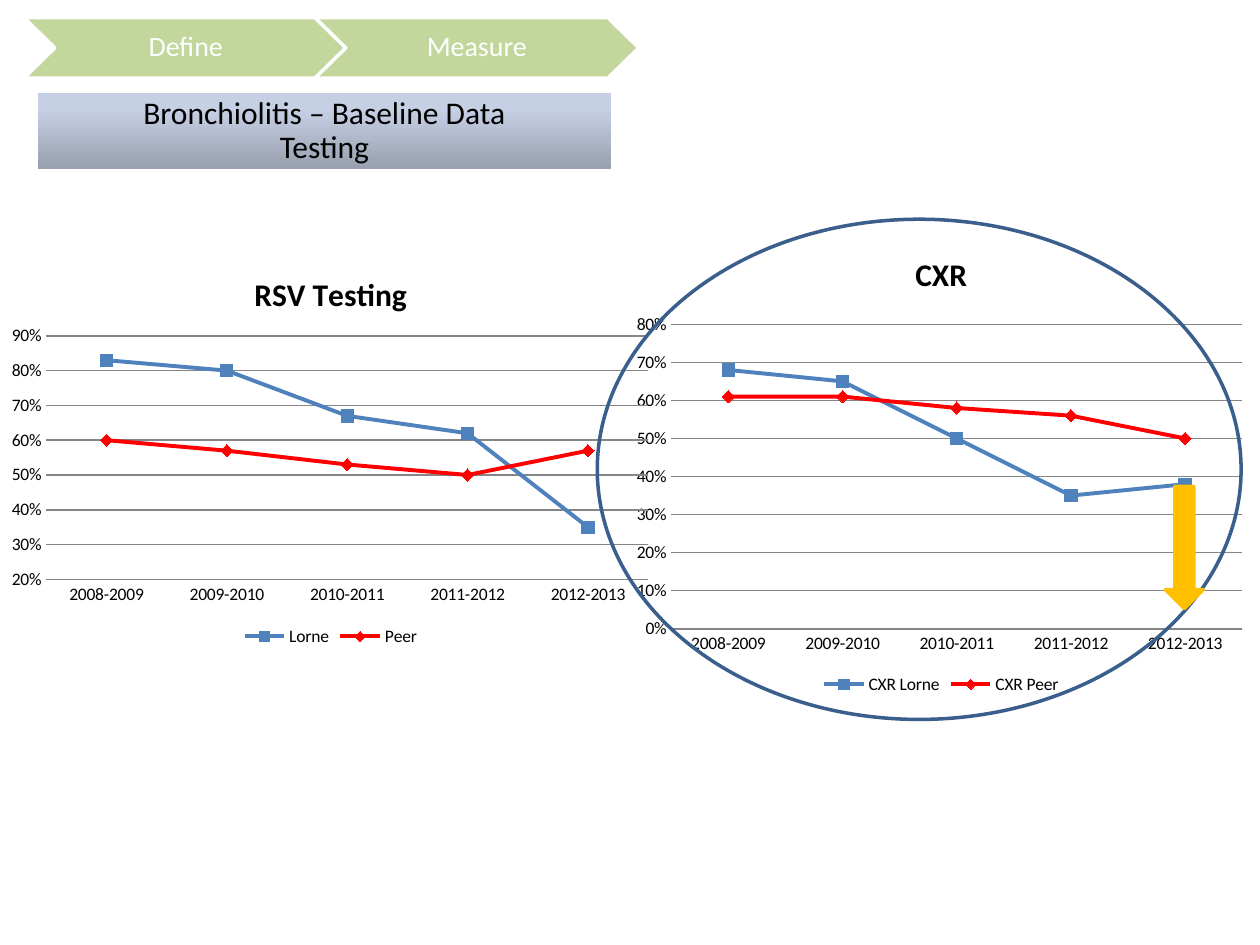
from lxml import etree
from pptx import Presentation
from pptx.chart.data import CategoryChartData
from pptx.dml.color import RGBColor
from pptx.enum.chart import (XL_CHART_TYPE as CT, XL_LEGEND_POSITION as LP,
                             XL_MARKER_STYLE as MS, XL_TICK_MARK as TM)
from pptx.enum.shapes import MSO_SHAPE as SH
from pptx.enum.text import MSO_ANCHOR as MA, PP_ALIGN as PA
from pptx.oxml.ns import qn
from pptx.util import Inches, Pt

COLS, ROWS = 100, 75
CELL = Inches(0.1)
FONT = "Calibri"
C = {"green": "C3D69B", "white": "FFFFFF", "black": "000000", "blue": "4F81BD",
     "red": "FF0000", "navy": "3A5F8C", "gold": "FFC000", "grid": "868686",
     "slate": "99A0B0", "mist": "C6D0E4"}
YEARS = [f"{y}-{y + 1}" for y in range(2008, 2013)]


def rgb(name):
    return RGBColor.from_string(C[name])


def cells(*box):
    return [round(v * CELL) for v in box]


def inset(box, left, top, width, height):
    return box[0] + left, box[1] + top, width, height


def set_font(font, size, color, bold=False):
    font.name, font.size, font.bold = FONT, Pt(size), bold
    font.color.rgb = rgb(color)


def add_shape(s, kind, box, fill=None, line=None):
    sp = s.shapes.add_shape(kind, *cells(*box))
    sp.shadow.inherit = False
    if fill:
        sp.fill.solid()
        sp.fill.fore_color.rgb = rgb(fill)
    else:
        sp.fill.background()
    if line:
        sp.line.color.rgb = rgb(line)
        sp.line.width = Pt(2)
    else:
        sp.line.fill.background()
    return sp


def add_label(sp, lines, size, color, margin):
    tf = sp.text_frame
    tf.word_wrap = True
    tf.vertical_anchor = MA.MIDDLE
    tf.margin_left = tf.margin_right = tf.margin_top = tf.margin_bottom = Inches(margin)
    p = tf.paragraphs[0]
    p.alignment, p.line_spacing = PA.CENTER, 0.9
    for i, line in enumerate(lines):
        if i:
            p.add_line_break()
        r = p.add_run()
        r.text = line
        set_font(r.font, size, color)


def add_steps(s, box, names):
    left, top, width, height = box
    overlap = 2.6
    step = (width + overlap * (len(names) - 1)) / len(names)
    for i, name in enumerate(names):
        sp = add_shape(s, SH.CHEVRON, (left + i * (step - overlap), top, step, height),
                       "green", "white")
        sp.adjustments[0] = 0.51
        add_label(sp, [name], 16, "white", 0.02)


def add_heading(s, box, lines):
    sp = add_shape(s, SH.RECTANGLE, box)
    sp.fill.gradient()
    sp.fill.gradient_angle = 90
    for stop, name, pos in zip(sp.fill.gradient_stops, ("slate", "mist"), (0, 0.8)):
        stop.color.rgb = rgb(name)
        stop.position = pos
    add_label(sp, lines, 18, "black", 0.14)


def set_plot_area(chart, share):
    area = chart._chartSpace.chart.plotArea
    for old in area.findall(qn("c:layout")):
        area.remove(old)
    layout = etree.Element(qn("c:layout"))
    manual = etree.SubElement(layout, qn("c:manualLayout"))
    values = [("layoutTarget", "inner"), ("xMode", "edge"), ("yMode", "edge")]
    for tag, val in values + list(zip("xywh", share)):
        etree.SubElement(manual, qn(f"c:{tag}")).set("val", str(val))
    area.insert(0, layout)


def add_trend(s, box, title, series, low, high, plot, grid_width):
    data = CategoryChartData(number_format="0%")
    data.categories = YEARS
    for name, values in series:
        data.add_series(name, values)
    chart = s.shapes.add_chart(CT.LINE_MARKERS, *cells(*box), data).chart
    set_font(chart.font, 10, "black")
    set_plot_area(chart, plot)

    chart.has_title = True
    r = chart.chart_title.text_frame.paragraphs[0].add_run()
    r.text = title
    set_font(r.font, 18, "black", True)
    chart.chart_title.include_in_layout = False
    chart.has_legend = True
    chart.legend.position = LP.BOTTOM
    chart.legend.include_in_layout = False

    cat, val = chart.category_axis, chart.value_axis
    for axis in (cat, val):
        axis.major_tick_mark = axis.minor_tick_mark = TM.NONE
    cat.format.line.color.rgb = rgb("grid")
    cat.format.line.width = Pt(grid_width)
    val.format.line.fill.background()
    val.minimum_scale, val.maximum_scale, val.major_unit = low, high, 0.1
    val.tick_labels.number_format = "0%"
    val.tick_labels.number_format_is_linked = False
    val.has_major_gridlines = True
    val.major_gridlines.format.line.color.rgb = rgb("grid")
    val.major_gridlines.format.line.width = Pt(grid_width)

    styles = (("blue", MS.SQUARE, 7), ("red", MS.DIAMOND, 7))
    chart.plots[0].vary_by_categories = False
    for ser, (color, style, size) in zip(chart.plots[0].series, styles):
        ser.smooth = False
        ser.format.line.color.rgb = rgb(color)
        ser.format.line.width = Pt(2.25)
        ser.marker.style, ser.marker.size = style, size
        ser.marker.format.fill.solid()
        ser.marker.format.fill.fore_color.rgb = rgb(color)
        ser.marker.format.line.color.rgb = rgb(color)


def add_highlight(s, box):
    add_shape(s, SH.OVAL, box, line="navy")
    add_shape(s, SH.DOWN_ARROW, inset(box, 45.1, 21.2, 3, 9.7), "gold", "gold")


def main():
    prs = Presentation()
    prs.slide_width, prs.slide_height = COLS * CELL, ROWS * CELL
    s = prs.slides.add_slide(prs.slide_layouts[6])
    focus = (47.4, 17.4, 51.1, 39.7)
    add_trend(s, inset(focus, 2.4, 0.9, 49.8, 37.2), "CXR",
              [("CXR Lorne", (0.68, 0.65, 0.5, 0.35, 0.38)),
               ("CXR Peer", (0.61, 0.61, 0.58, 0.56, 0.5))],
              0, 0.8, (0.07, 0.2, 0.91, 0.65), 0.75)
    add_trend(s, (0, 20, 52.5, 31.7), "RSV Testing",
              [("Lorne", (0.83, 0.8, 0.67, 0.62, 0.35)),
               ("Peer", (0.6, 0.57, 0.53, 0.5, 0.57))],
              0.2, 0.9, (0.07, 0.21, 0.91, 0.61), 1)
    add_highlight(s, focus)
    add_steps(s, (1.9, 1.4, 48.8, 4.8), ["Define", "Measure"])
    add_heading(s, (3, 7.4, 45.5, 6), ["Bronchiolitis – Baseline Data", "Testing"])
    prs.save("out.pptx")


if __name__ == "__main__":
    main()
